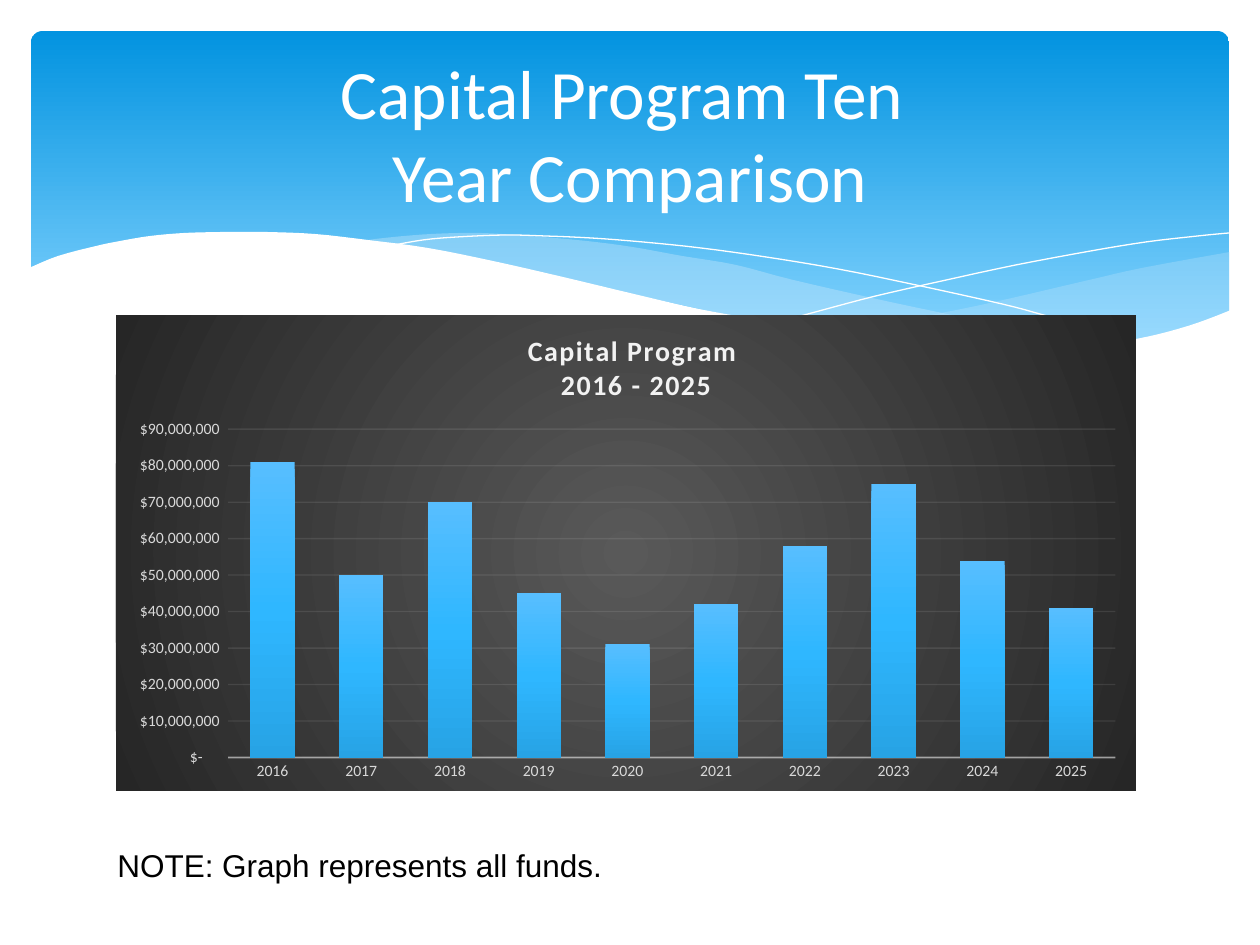
from dataclasses import dataclass

from pptx import Presentation
from pptx.chart.data import CategoryChartData
from pptx.dml.color import RGBColor
from pptx.enum.chart import XL_CHART_TYPE, XL_TICK_MARK
from pptx.enum.shapes import MSO_SHAPE
from pptx.enum.text import MSO_ANCHOR, MSO_AUTO_SIZE, PP_ALIGN
from pptx.oxml import parse_xml
from pptx.oxml.ns import nsdecls, qn
from pptx.util import Emu, Pt

PX = 914400 / 126
COLUMN = XL_CHART_TYPE.COLUMN_CLUSTERED
NO_TICK = XL_TICK_MARK.NONE
ROUNDED = MSO_SHAPE.ROUNDED_RECTANGLE
MIDDLE = MSO_ANCHOR.MIDDLE
NO_AUTOFIT = MSO_AUTO_SIZE.NONE
CENTER = PP_ALIGN.CENTER
TITLE_ONLY = 5


@dataclass(frozen=True)
class Theme:
    heading_font: str = "Calibri"
    note_font: str = "Arial"
    white: str = "FFFFFF"
    black: str = "000000"
    wave: str = "C6E7FC"
    axis_text: str = "D9D9D9"
    axis_line: str = "F2F2F2"
    banner: tuple = ((0, "0293E0"), (90, "83D3FE"))
    chart_back: tuple = ((0, "595959"), (100, "262626"))
    bars: tuple = ((0, "57BEFF"), (50, "2FB7FF"), (100, "27A3E5"))
    title_size: float = 39.6
    note_size: int = 18
    chart_title_size: int = 16
    axis_size: int = 9


THEME = Theme()

WAVE_RIGHT = [
    [(1230, 252), (1142, 268), (1085, 281), (981, 305), (889, 323), (833, 334)],
    [(833, 334), (906, 342), (976, 347), (1037, 350), (1099, 348), (1150, 340),
     (1195, 327), (1230, 311)],
]
WAVE_MIDDLE = [
    [(1125, 344), (1054, 334), (977, 320), (890, 302), (793, 280), (736, 265),
     (682, 256), (632, 247), (586, 241), (529, 236), (479, 233), (433, 234),
     (394, 237), (360, 241)],
    [(360, 241), (431, 251), (509, 266), (566, 280), (668, 302), (757, 321),
     (838, 335), (911, 344), (973, 349), (1031, 350), (1081, 349), (1125, 344)],
]
LINE_FALLING = [
    [(389, 246), (423, 240), (457, 237), (505, 235), (545, 236), (591, 238),
     (643, 242), (701, 248), (766, 257), (838, 269), (916, 285), (1002, 304),
     (1047, 316), (1143, 343)],
]
LINE_RISING = [
    [(772, 324), (823, 310), (876, 296), (942, 281), (1016, 265), (1091, 251),
     (1146, 242), (1198, 236), (1229, 233)],
]
WAVE_FRONT = [
    [(1231, 310), (1197, 323), (1159, 334), (1118, 342), (1071, 347), (1019, 349),
     (937, 345), (867, 338), (816, 330), (760, 320), (699, 309), (634, 294),
     (563, 277), (493, 261), (428, 248), (368, 240), (315, 234), (266, 232),
     (223, 232), (184, 233), (150, 236), (120, 241), (96, 246), (58, 256), (29, 268)],
    [(29, 415)],
    [(1231, 415)],
]

FUNDS = {"2016": 81, "2017": 50, "2018": 70, "2019": 45, "2020": 31,
         "2021": 42, "2022": 58, "2023": 75, "2024": 54, "2025": 41}
MILLION = 1_000_000
DOLLARS = '_("$"* #,##0_);_("$"* \\(#,##0\\);_("$"* "-"??_);_(@_)'


def px(*values):
    return [Emu(round(v * PX)) for v in values]


def rgb(color):
    return RGBColor.from_string(color)


def set_font(font, name, size, color, bold=False):
    font.name = name
    font.size = Pt(size)
    font.bold = bold
    font.color.rgb = rgb(color)


def set_alpha(element, percent):
    for color in element.iter(qn("a:srgbClr")):
        color.append(parse_xml(f'<a:alpha {nsdecls("a")} val="{percent * 1000}"/>'))


def gradient(stops, circle=False):
    marks = "".join(f'<a:gs pos="{at * 1000}"><a:srgbClr val="{color}"/></a:gs>'
                    for at, color in stops)
    direction = ('<a:path path="circle"><a:fillToRect l="50000" t="50000" '
                 'r="50000" b="50000"/></a:path>' if circle
                 else '<a:lin ang="5400000" scaled="0"/>')
    return parse_xml(f'<a:gradFill {nsdecls("a")} rotWithShape="1">'
                     f'<a:gsLst>{marks}</a:gsLst>{direction}</a:gradFill>')


def fill_gradient(fill, sp_pr, stops):
    fill.solid()
    solid = sp_pr.find(qn("a:solidFill"))
    sp_pr.replace(solid, gradient(stops))


def smooth(knots, steps=4):
    points = knots[:1]
    padded = [knots[0], *knots, knots[-1]]
    for a, b, c, d in zip(padded, padded[1:], padded[2:], padded[3:]):
        for i in range(1, steps + 1):
            t = i / steps
            points.append(tuple(
                (2 * q + (r - p) * t + (2 * p - 5 * q + 4 * r - u) * t ** 2
                 + (3 * q - p - 3 * r + u) * t ** 3) / 2
                for p, q, r, u in zip(a, b, c, d)))
    return points


def add_curve(s, runs, fill=None, alpha=100):
    points = [px(*point) for run in runs for point in smooth(run)]
    builder = s.shapes.build_freeform(*points[0])
    builder.add_line_segments(points[1:], close=fill is not None)
    sp = builder.convert_to_shape()
    sp.shadow.inherit = False
    if fill:
        sp.fill.solid()
        sp.fill.fore_color.rgb = rgb(fill)
        set_alpha(sp._element.spPr, alpha)
        sp.line.fill.background()
    else:
        sp.fill.background()
        sp.line.color.rgb = rgb(THEME.white)
        sp.line.width = 0


def add_banner(s):
    sp = s.shapes.add_shape(ROUNDED, *px(31, 31, 1198, 340))
    sp.adjustments[0] = 0.034
    sp.shadow.inherit = False
    fill_gradient(sp.fill, sp._element.spPr, THEME.banner)
    sp.line.fill.background()
    add_curve(s, WAVE_RIGHT, THEME.wave, 29)
    add_curve(s, WAVE_MIDDLE, THEME.wave, 40)
    add_curve(s, LINE_FALLING)
    add_curve(s, LINE_RISING)
    add_curve(s, WAVE_FRONT, THEME.white)


def add_title(s, lines):
    sp = s.shapes.title
    s.shapes._spTree.append(sp._element)
    sp.left, sp.top, sp.width, sp.height = px(63, 47, 1134, 173)
    tf = sp.text_frame
    tf.auto_size = NO_AUTOFIT
    tf.vertical_anchor = MIDDLE
    p = tf.paragraphs[0]
    p.alignment = CENTER
    for i, line in enumerate(lines):
        if i:
            p.add_line_break()
        r = p.add_run()
        r.text = line
        set_font(r.font, THEME.heading_font, THEME.title_size, THEME.white)


def add_note(s, text):
    tf = s.shapes.add_textbox(*px(105, 840, 515, 50)).text_frame
    tf.word_wrap = False
    r = tf.paragraphs[0].add_run()
    r.text = text
    set_font(r.font, THEME.note_font, THEME.note_size, THEME.black)


def place(parent, index, inner=False, **fractions):
    for old in parent.findall(qn("c:layout")):
        parent.remove(old)
    target = '<c:layoutTarget val="inner"/>' if inner else ""
    modes = "".join(f'<c:{key}Mode val="edge"/>' for key in "xy")
    values = "".join(f'<c:{key} val="{v}"/>' for key, v in fractions.items())
    parent.insert(index, parse_xml(
        f'<c:layout {nsdecls("c")}><c:manualLayout>{target}{modes}{values}'
        '</c:manualLayout></c:layout>'))


def add_chart_title(chart, lines):
    tf = chart.chart_title.text_frame
    for i, line in enumerate(lines):
        p = tf.add_paragraph() if i else tf.paragraphs[0]
        p.alignment = CENTER
        r = p.add_run()
        r.text = line
        set_font(r.font, THEME.heading_font, THEME.chart_title_size,
                 THEME.axis_line, bold=True)
        r.font._element.set("spc", "100")
    place(chart.chart_title._element, 1, x=0.4, y=0.03)


def style_line(line, width, alpha):
    line.color.rgb = rgb(THEME.axis_line)
    line.width = Pt(width)
    set_alpha(line._get_or_add_ln(), alpha)


def style_axes(chart):
    for axis in (chart.category_axis, chart.value_axis):
        axis.major_tick_mark = axis.minor_tick_mark = NO_TICK
        set_font(axis.tick_labels.font, THEME.heading_font, THEME.axis_size,
                 THEME.axis_text)
    style_line(chart.category_axis.format.line, 1, 54)
    values = chart.value_axis
    values.minimum_scale, values.maximum_scale = 0, 90 * MILLION
    values.major_unit = 10 * MILLION
    values.format.line.fill.background()
    values.tick_labels.number_format = DOLLARS
    values.tick_labels.number_format_is_linked = False
    style_line(values.major_gridlines.format.line, 0.75, 10)


def add_funds_chart(s):
    data = CategoryChartData()
    data.categories = list(FUNDS)
    data.add_series("Series 1", [v * MILLION for v in FUNDS.values()])
    chart = s.shapes.add_chart(COLUMN, *px(116, 315, 1020, 476), data).chart
    chart.has_legend = False
    set_font(chart.font, THEME.heading_font, 10, THEME.black)
    back = parse_xml(f'<c:spPr {nsdecls("c", "a")}><a:ln><a:noFill/></a:ln></c:spPr>')
    back.insert(0, gradient(THEME.chart_back, circle=True))
    chart._chartSpace.find(qn("c:txPr")).addprevious(back)
    add_chart_title(chart, ["Capital Program ", "2016 - 2025"])
    style_axes(chart)
    plot = chart.plots[0]
    plot.gap_width, plot.overlap = 100, -24
    plot.vary_by_categories = False
    bars = plot.series[0]
    bars.invert_if_negative = False
    fill = bars.format.fill
    fill_gradient(fill, bars._element.find(qn("c:spPr")), THEME.bars)
    place(chart._chartSpace.chart.plotArea, 0, inner=True,
          x=0.11, y=0.24, w=0.87, h=0.69)


def main():
    prs = Presentation()
    prs.slide_width, prs.slide_height = px(1260, 945)
    s = prs.slides.add_slide(prs.slide_layouts[TITLE_ONLY])
    add_banner(s)
    add_title(s, ["Capital Program Ten ", "Year Comparison"])
    add_funds_chart(s)
    add_note(s, "NOTE: Graph represents all funds.")
    prs.save("out.pptx")


if __name__ == "__main__":
    main()
